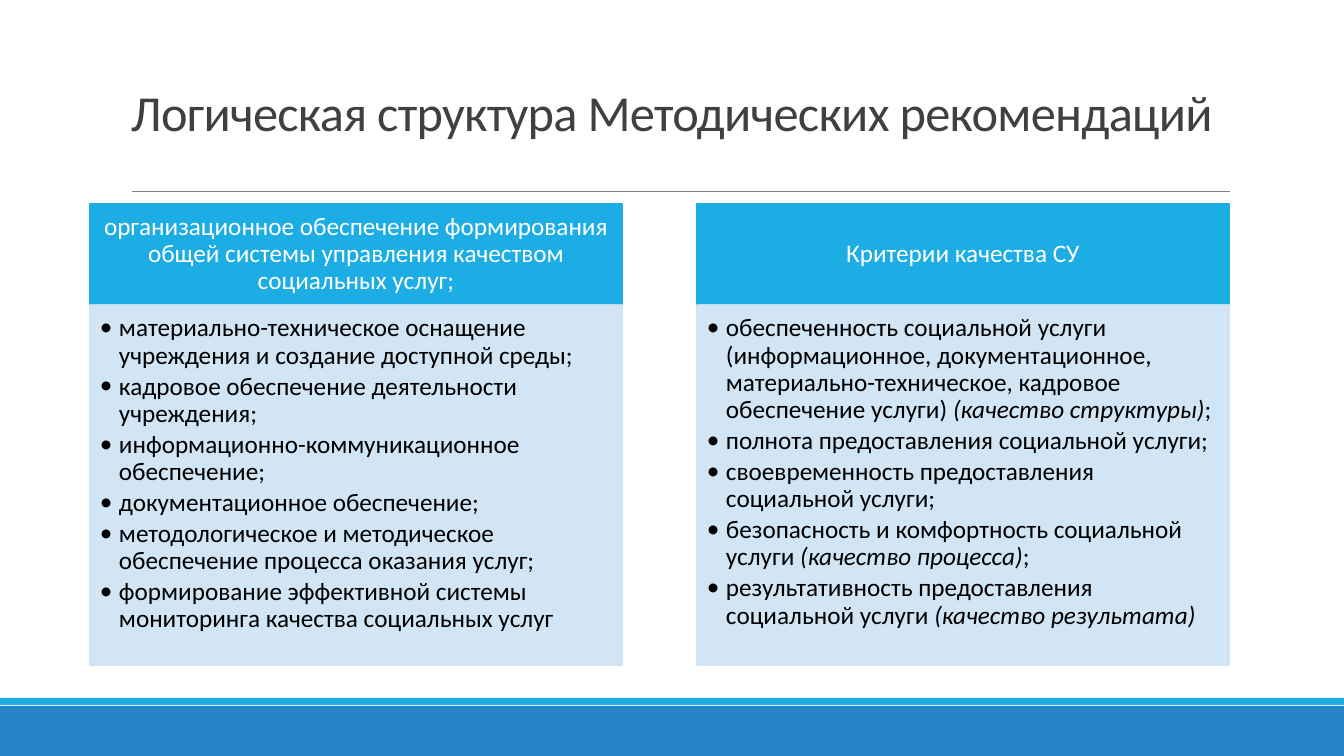
"""Build the slide on the logical structure of the guidelines."""
import pptx
import pptx.dml.color
import pptx.enum.shapes
import pptx.enum.text
import pptx.oxml.ns
import pptx.util
from lxml import etree

TITLE = "Логическая структура Методических рекомендаций"
PANELS = [
    ("организационное обеспечение формирования общей системы управления качеством социальных услуг;", [
        ("материально-техническое оснащение учреждения и создание доступной среды;",),
        ("кадровое обеспечение деятельности учреждения;",),
        ("информационно-коммуникационное обеспечение;",),
        ("документационное обеспечение;",),
        ("методологическое и методическое обеспечение процесса оказания услуг;",),
        ("формирование эффективной системы мониторинга качества социальных услуг",),
    ]),
    ("Критерии качества СУ", [
        ("обеспеченность социальной услуги (информационное, документационное, "
         "материально-техническое, кадровое обеспечение услуги) ", "(качество структуры)", ";"),
        ("полнота предоставления социальной услуги;",),
        ("своевременность предоставления социальной услуги;",),
        ("безопасность и комфортность социальной услуги ", "(качество процесса)", ";"),
        ("результативность предоставления социальной услуги ", "(качество результата)"),
    ]),
]
COLORS = {"head": "1CADE4", "body": "CDE3F5", "foot": "2683C6", "rule": "808080",
          "title": "404040", "white": "FFFFFF", "black": "000000"}
WIDE, HIGH = 1344, 756
LEFT, TOP, WIDTH, STEP = 90, 204, 532, 607
HEAD, BODY = 101, 360
INDENT = 19

ALIGN = pptx.enum.text.PP_ALIGN
ANCHOR = pptx.enum.text.MSO_ANCHOR
Pt = pptx.util.Pt
TITLE_STYLE = {"line_spacing": 0.85}
HEAD_STYLE = {"alignment": ALIGN.CENTER, "line_spacing": 0.9}
BODY_STYLE = {"alignment": ALIGN.LEFT, "line_spacing": 0.9, "space_after": Pt(2.7)}


def px(count):
    return pptx.util.Emu(round(count * 914400 / 100.8))


def color(name):
    return pptx.dml.color.RGBColor.from_string(COLORS[name])


def assign(target, values):
    for key, value in values.items():
        setattr(target, key, value)


def add_tag(parent, tag, **values):
    return etree.SubElement(parent, pptx.oxml.ns.qn(tag), values)


def add_box(slide, place, tone, edge=True):
    kind = pptx.enum.shapes.MSO_SHAPE.RECTANGLE
    box = slide.shapes.add_shape(kind, *map(px, place))
    box.shadow.inherit = False
    box.fill.solid()
    box.fill.fore_color.rgb = color(tone)
    if edge:
        box.line.color.rgb = color(tone)
        box.line.width = Pt(1.25)
    else:
        box.line.fill.background()
    return box


def set_frame(frame, anchor, insets):
    sides = ("margin_left", "margin_top", "margin_right", "margin_bottom")
    assign(frame, dict(zip(sides, map(px, insets))))
    assign(frame, {"word_wrap": True, "vertical_anchor": anchor})


def add_runs(para, texts, size, tone, style):
    assign(para, style)
    for index, text in enumerate(texts):
        run = para.add_run()
        run.text = text
        assign(run.font, {"name": "Calibri", "size": Pt(size), "italic": index % 2 == 1})
        run.font.color.rgb = color(tone)


def add_title(slide):
    frame = slide.shapes.add_textbox(*map(px, (121, 31, 1109, 116))).text_frame
    set_frame(frame, ANCHOR.BOTTOM, (10, 5, 10, 5))
    para = frame.paragraphs[0]
    add_runs(para, [TITLE], 36, "title", TITLE_STYLE)
    para.runs[0].font._element.set("spc", "-50")


def add_panel(slide, left, head, items):
    box = add_box(slide, (left, TOP, WIDTH, HEAD), "head")
    set_frame(box.text_frame, ANCHOR.MIDDLE, (14, 8, 14, 8))
    add_runs(box.text_frame.paragraphs[0], [head], 18, "white", HEAD_STYLE)

    box = add_box(slide, (left, TOP + HEAD, WIDTH, BODY), "body")
    for tint in box._element.spPr.iter(pptx.oxml.ns.qn("a:srgbClr")):
        add_tag(tint, "a:alpha", val="90000")
    frame = box.text_frame
    set_frame(frame, ANCHOR.TOP, (10, 10, 14, 16))
    for index, texts in enumerate(items):
        para = frame.add_paragraph() if index else frame.paragraphs[0]
        add_runs(para, texts, 18, "black", BODY_STYLE)
        props = para._p.get_or_add_pPr()
        props.set("marL", str(px(INDENT)))
        props.set("indent", str(-px(INDENT)))
        add_tag(props, "a:buFont", typeface="Calibri")
        add_tag(props, "a:buChar", char="•")


def add_rule(slide):
    kind = pptx.enum.shapes.MSO_CONNECTOR.STRAIGHT
    rule = slide.shapes.add_connector(kind, *map(px, (132, 191, 1230, 191)))
    rule.line.color.rgb = color("rule")
    rule.line.width = Pt(0.5)
    add_tag(rule._element.spPr, "a:effectLst")


def main():
    deck = pptx.Presentation()
    assign(deck, {"slide_width": px(WIDE), "slide_height": px(HIGH)})
    slide = deck.slides.add_slide(deck.slide_layouts[6])
    add_box(slide, (0, 706, WIDE, 50), "foot", False)
    add_box(slide, (0, 698, WIDE, 7), "head", False)
    add_rule(slide)
    add_title(slide)
    for index, (head, items) in enumerate(PANELS):
        add_panel(slide, LEFT + index * STEP, head, items)
    deck.save("out.pptx")


if __name__ == "__main__":
    main()
